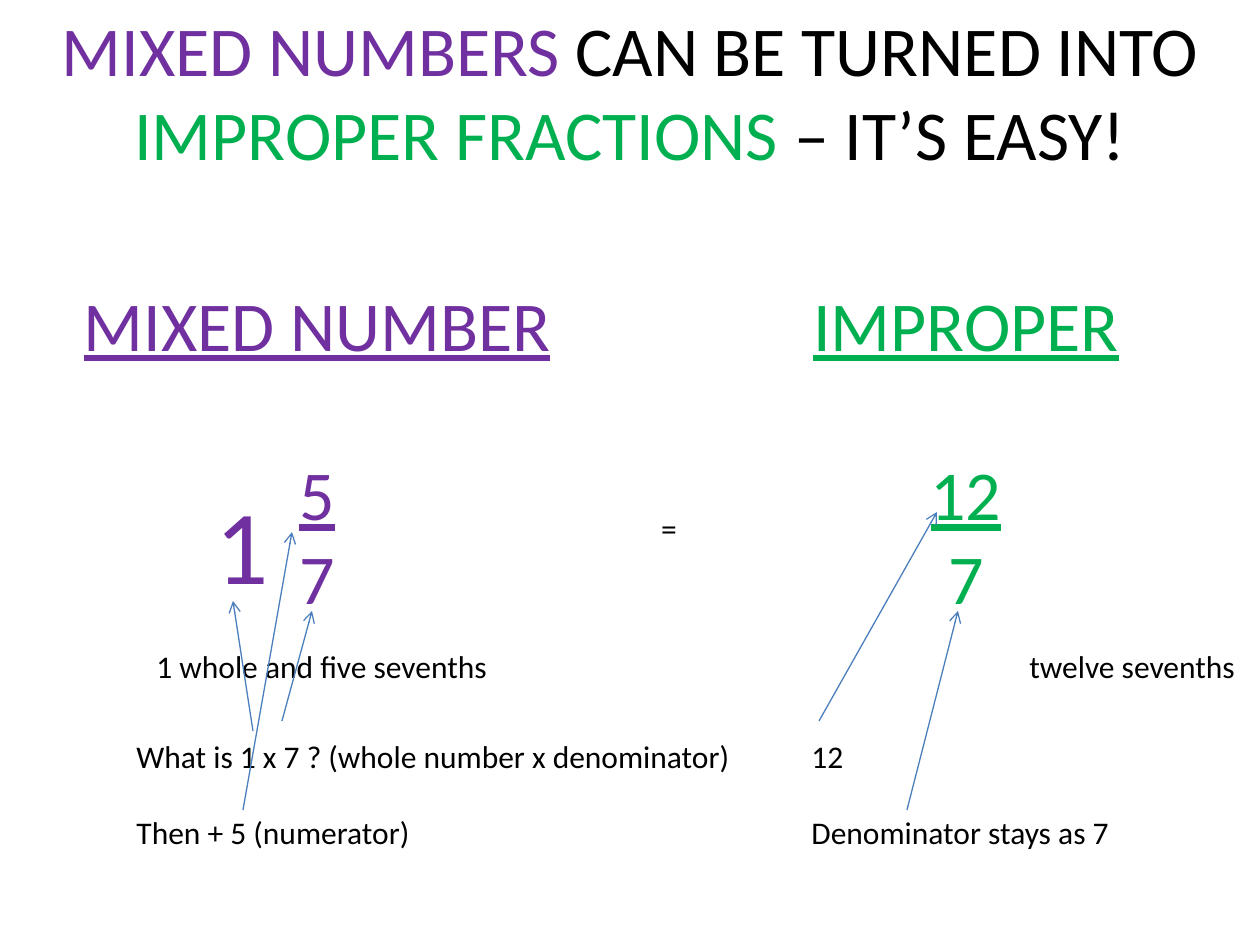
import pptx
import pptx.dml.color
import pptx.enum.shapes
import pptx.enum.text
import pptx.oxml
import pptx.oxml.ns
import pptx.util

PURPLE = pptx.dml.color.RGBColor(0x70, 0x30, 0xA0)
GREEN = pptx.dml.color.RGBColor(0x00, 0xB0, 0x50)
BLACK = pptx.dml.color.RGBColor(0x00, 0x00, 0x00)
BLUE = pptx.dml.color.RGBColor(0x4B, 0x7E, 0xBC)

CENTER = pptx.enum.text.PP_ALIGN.CENTER
LEFT = pptx.enum.text.PP_ALIGN.LEFT
EMU_PER_PX = 914400 / 126


def px(length):
    return pptx.util.Emu(round(length * EMU_PER_PX))


class SlideBuilder:
    font_name = "Calibri"
    line_width = pptx.util.Pt(0.75)

    def __init__(self, slide):
        self.slide = slide

    def format_frame(self, frame):
        settings = {
            "word_wrap": True,
            "auto_size": pptx.enum.text.MSO_AUTO_SIZE.SHAPE_TO_FIT_TEXT,
            "vertical_anchor": pptx.enum.text.MSO_ANCHOR.TOP,
        }
        for name, value in settings.items():
            setattr(frame, name, value)

    def add_run(self, paragraph, text, size, color, underline=False):
        run = paragraph.add_run()
        run.text = text
        settings = {"name": self.font_name, "size": pptx.util.Pt(size), "underline": underline}
        for name, value in settings.items():
            setattr(run.font, name, value)
        run.font.color.rgb = color

    def title(self, box, runs, size):
        shape = self.slide.shapes.title
        for name, value in zip(("left", "top", "width", "height"), box):
            setattr(shape, name, px(value))
        self.format_frame(shape.text_frame)
        paragraph = shape.text_frame.paragraphs[0]
        paragraph.alignment = CENTER
        for text, color in runs:
            self.add_run(paragraph, text, size, color)

    def text(self, box, lines, size=18, color=BLACK, alignment=LEFT, gap=0, underlined=0):
        """Write lines with a gap after the first; the first `underlined` lines are underlined."""
        shape = self.slide.shapes.add_textbox(*map(px, box))
        frame = shape.text_frame
        self.format_frame(frame)
        for index, line in enumerate(lines):
            paragraph = frame.add_paragraph() if index else frame.paragraphs[0]
            paragraph.alignment = alignment
            if index == 0 and gap:
                paragraph.space_after = pptx.util.Pt(gap)
            self.add_run(paragraph, line, size, color, index < underlined)

    def arrow(self, start, end):
        connector = self.slide.shapes.add_connector(
            pptx.enum.shapes.MSO_CONNECTOR.STRAIGHT, *map(px, start + end))
        connector.line.color.rgb = BLUE
        connector.line.width = self.line_width
        tail = pptx.oxml.parse_xml(
            '<a:tailEnd %s type="arrow"/>' % pptx.oxml.ns.nsdecls("a"))
        connector.line._get_or_add_ln().append(tail)
        effects = pptx.oxml.parse_xml("<a:effectLst %s/>" % pptx.oxml.ns.nsdecls("a"))
        connector._element.spPr.append(effects)


def main():
    presentation = pptx.Presentation()
    presentation.slide_width = px(1260)
    presentation.slide_height = px(945)
    builder = SlideBuilder(presentation.slides.add_slide(presentation.slide_layouts[5]))

    # Title
    builder.title((0, 0, 1260, 183), [
        ("MIXED NUMBERS ", PURPLE),
        ("CAN BE TURNED INTO ", BLACK),
        ("IMPROPER FRACTIONS ", GREEN),
        ("– IT’S EASY!", BLACK),
    ], size=40)

    # Headings with their fractions
    for left, width, lines, color in [
        (748, 436, ["IMPROPER", "12", "7"], GREEN),
        (44, 546, ["MIXED NUMBER", "5", "7"], PURPLE),
    ]:
        builder.text((left, 275, width, 352), lines, size=40, color=color,
                     alignment=CENTER, gap=48.8, underlined=2)
    builder.text((610, 503, 118, 50), ["="], alignment=CENTER)
    builder.text((203, 473, 110, 140), ["1"], size=60, color=PURPLE)

    # Fractions in words
    builder.text((144, 641, 377, 50), ["1 whole and five sevenths"])
    builder.text((1017, 641, 243, 50), ["twelve sevenths"])

    # Working steps
    for left, width, lines in [
        (124, 635, ["What is 1 x 7 ? (whole number x denominator)", "Then + 5 (numerator)"]),
        (799, 461, ["12", "Denominator stays as 7"]),
    ]:
        builder.text((left, 731, width, 127), lines, gap=22)

    # Arrows from the steps to the numbers
    for start, end in [
        ((253, 731), (233, 601)),
        ((282, 721), (312, 611)),
        ((243, 810), (292, 532)),
        ((819, 721), (937, 512)),
        ((907, 810), (958, 611)),
    ]:
        builder.arrow(start, end)

    presentation.save("out.pptx")


if __name__ == "__main__":
    main()
